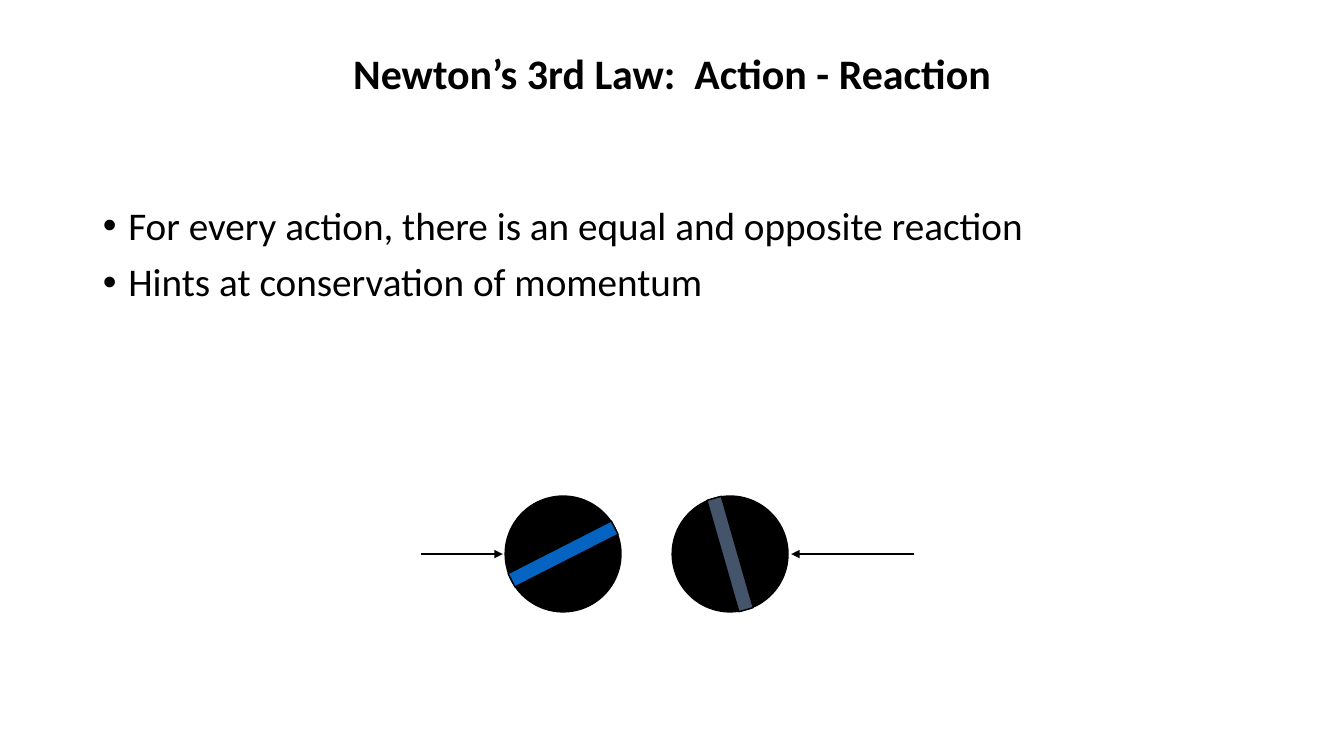
from dataclasses import dataclass

from lxml import etree
from pptx import Presentation
from pptx.dml.color import RGBColor
from pptx.enum.shapes import MSO_CONNECTOR, MSO_SHAPE
from pptx.enum.text import MSO_ANCHOR, MSO_AUTO_SIZE, PP_ALIGN
from pptx.oxml.ns import qn
from pptx.shapes.group import GroupShape
from pptx.shapes.placeholder import SlidePlaceholder
from pptx.text.text import _Paragraph
from pptx.util import Cm, Pt

ELLIPSE, RECTANGLE = MSO_SHAPE.OVAL, MSO_SHAPE.RECTANGLE
STRAIGHT = MSO_CONNECTOR.STRAIGHT
LEFT, CENTER = PP_ALIGN.LEFT, PP_ALIGN.CENTER
TOP, MIDDLE = MSO_ANCHOR.TOP, MSO_ANCHOR.MIDDLE

COLORS = {"black": "000000", "blue": "0563C1", "slate": "44546A"}
FONT = "Calibri"

TITLE = "Newton’s 3rd Law:  Action - Reaction"
BULLETS = [
    "For every action, there is an equal and opposite reaction",
    "Hints at conservation of momentum",
]

BALL_TOP = 12.5
BALL_SIZE = 2.92
STRIPE_WIDTH = 0.38


@dataclass(frozen=True)
class Ball:
    """A striped ball and the arrow that pushes it, in centimetres and degrees."""
    left: float
    rotation: float
    stripe_color: str
    arrow_start: float
    arrow_end: float


BALLS = [
    Ball(12.73, 63, "blue", 10.62, 12.67),
    Ball(16.94, 344, "slate", 23.04, 19.94),
]


def color(name: str) -> RGBColor:
    return RGBColor.from_string(COLORS[name])


def write_text(paragraph: _Paragraph, text: str, *, size: float, bold: bool = False,
               align: PP_ALIGN = LEFT, space_before: float = 0) -> None:
    paragraph.alignment = align
    paragraph.line_spacing = 0.9
    paragraph.space_before = Pt(space_before)
    run = paragraph.add_run()
    run.text = text
    run.font.name = FONT
    run.font.size = Pt(size)
    run.font.bold = bold
    run.font.color.rgb = color("black")


def add_bullet(paragraph: _Paragraph) -> None:
    properties = paragraph._p.get_or_add_pPr()
    properties.set("marL", str(Cm(0.64)))
    properties.set("indent", str(-Cm(0.64)))
    etree.SubElement(properties, qn("a:buFont"), typeface="Arial")
    etree.SubElement(properties, qn("a:buChar"), char="•")


def place(placeholder: SlidePlaceholder, left: float, top: float, width: float,
          height: float, anchor: MSO_ANCHOR) -> None:
    placeholder.left, placeholder.top = Cm(left), Cm(top)
    placeholder.width, placeholder.height = Cm(width), Cm(height)
    frame = placeholder.text_frame
    frame.word_wrap = True
    frame.auto_size = MSO_AUTO_SIZE.NONE
    frame.vertical_anchor = anchor


def add_rotated_shape(group: GroupShape, kind: MSO_SHAPE, left: float, width: float,
                      rotation: float, fill: str) -> None:
    shape = group.shapes.add_shape(kind, Cm(left), Cm(BALL_TOP), Cm(width), Cm(BALL_SIZE))
    shape.rotation = rotation
    shape.shadow.inherit = False
    shape.fill.solid()
    shape.fill.fore_color.rgb = color(fill)
    shape.line.color.rgb = color("black")
    shape.line.width = Pt(1)


def add_arrow(group: GroupShape, start: float, end: float) -> None:
    middle = Cm(BALL_TOP + BALL_SIZE / 2)
    arrow = group.shapes.add_connector(STRAIGHT, Cm(start), middle, Cm(end), middle)
    arrow.line.color.rgb = color("black")
    arrow.line.width = Pt(2)
    etree.SubElement(arrow.line._get_or_add_ln(), qn("a:tailEnd"), type="triangle")
    etree.SubElement(arrow._element.spPr, qn("a:effectLst"))


def add_ball(group: GroupShape, ball: Ball) -> None:
    stripe_left = ball.left + (BALL_SIZE - STRIPE_WIDTH) / 2
    add_rotated_shape(group, ELLIPSE, ball.left, BALL_SIZE, ball.rotation, "black")
    add_rotated_shape(group, RECTANGLE, stripe_left, STRIPE_WIDTH, ball.rotation,
                      ball.stripe_color)


def main() -> None:
    presentation = Presentation()
    presentation.slide_width, presentation.slide_height = Cm(33.87), Cm(19.05)
    slide = presentation.slides.add_slide(presentation.slide_layouts[1])

    title = slide.shapes.title
    place(title, 6.15, 0.64, 21.59, 2.54, MIDDLE)
    write_text(title.text_frame.paragraphs[0], TITLE, size=30, bold=True, align=CENTER)

    body = slide.placeholders[1]
    place(body, 2.34, 5.08, 29.21, 12.09, TOP)
    for index, text in enumerate(BULLETS):
        frame = body.text_frame
        paragraph = frame.add_paragraph() if index else frame.paragraphs[0]
        write_text(paragraph, text, size=28, space_before=10)
        add_bullet(paragraph)

    collision = slide.shapes.add_group_shape()
    for ball in BALLS:
        add_ball(collision, ball)
    for ball in BALLS:
        add_arrow(collision, ball.arrow_start, ball.arrow_end)

    presentation.save("out.pptx")


if __name__ == "__main__":
    main()
